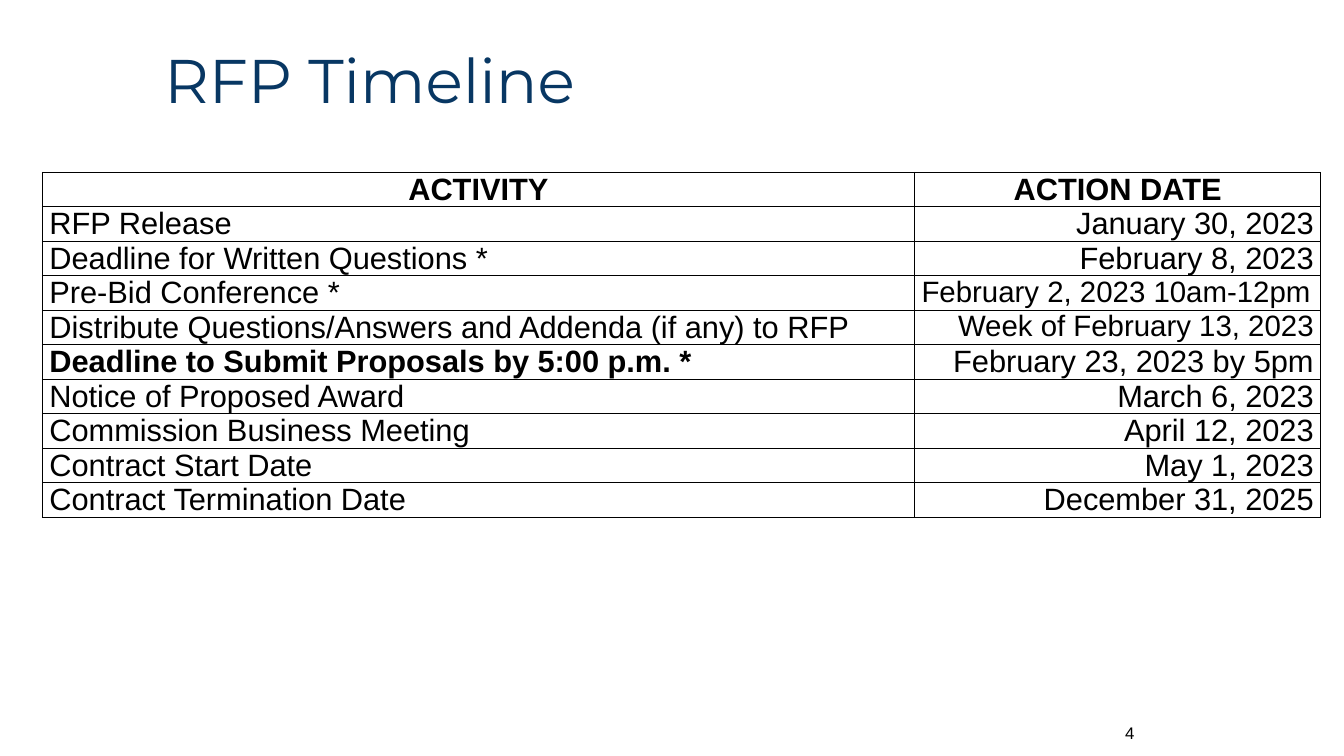
from lxml import etree
from pptx import Presentation
from pptx.dml.color import RGBColor
from pptx.enum.text import MSO_ANCHOR as ANCHOR, MSO_AUTO_SIZE as AUTOSIZE, PP_ALIGN as ALIGN
from pptx.oxml.ns import qn
from pptx.util import Inches, Pt

COLORS = {"navy": "083763", "black": "000000", "white": "FFFFFF"}


def style(paragraph, font_name, size, color, bold=False, align=ALIGN.LEFT):
    paragraph.alignment = align
    font = paragraph.runs[0].font
    formats = {"name": font_name, "size": Pt(size), "bold": bold}
    for attribute, value in formats.items():
        setattr(font, attribute, value)
    font.color.rgb = RGBColor.from_string(COLORS[color])


def add_borders(cell):
    properties = cell._tc.get_or_add_tcPr()
    for side in ("lnL", "lnR", "lnT", "lnB"):
        line = etree.SubElement(properties, qn(f"a:{side}"), w=str(Pt(1)))
        fill = etree.SubElement(line, qn("a:solidFill"))
        etree.SubElement(fill, qn("a:srgbClr"), val=COLORS["black"])


prs = Presentation()
prs.slide_width, prs.slide_height = Inches(13.33), Inches(7.5)
slide = prs.slides.add_slide(prs.slide_layouts[5])

title = slide.shapes.title
title.left, title.top = Inches(1.53), Inches(0.26)
title.width, title.height = Inches(10.89), Inches(1.14)
title.text_frame.text = "RFP Timeline"
title.text_frame.auto_size = AUTOSIZE.NONE
title.text_frame.vertical_anchor = ANCHOR.MIDDLE
title.text_frame.paragraphs[0].line_spacing = 0.9
style(title.text_frame.paragraphs[0], "Montserrat", 44, "navy")

# Activity, date, date size, date alignment
milestones = [
    ("ACTIVITY", "ACTION DATE", 22, ALIGN.CENTER),
    ("RFP Release", "January 30, 2023", 22, ALIGN.RIGHT),
    ("Deadline for Written Questions *", "February 8, 2023", 22, ALIGN.RIGHT),
    ("Pre-Bid Conference *", "February 2, 2023 10am-12pm", 21, ALIGN.LEFT),
    ("Distribute Questions/Answers and Addenda (if any) to RFP",
     "Week of February 13, 2023", 21, ALIGN.RIGHT),
    ("Deadline to Submit Proposals by 5:00 p.m. *", "February 23, 2023 by 5pm", 22, ALIGN.RIGHT),
    ("Notice of Proposed Award", "March 6, 2023", 22, ALIGN.RIGHT),
    ("Commission Business Meeting", "April 12, 2023", 22, ALIGN.RIGHT),
    ("Contract Start Date", "May 1, 2023", 22, ALIGN.RIGHT),
    ("Contract Termination Date", "December 31, 2025", 22, ALIGN.RIGHT),
]
timeline = slide.shapes.add_table(
    len(milestones), 2, Inches(0.42), Inches(1.71), Inches(12.68), Inches(3.4)).table
timeline.horz_banding = False
timeline.columns[0].width = Inches(8.65)
timeline.columns[1].width = Inches(4.03)

for row, (activity, date, date_size, date_align) in enumerate(milestones):
    header = row == 0
    deadline = activity.startswith("Deadline to Submit")
    entries = [
        (activity, 22, header or deadline, ALIGN.CENTER if header else ALIGN.LEFT, 6),
        (date, date_size, header, date_align, 6 if header else 3),
    ]
    for column, (text, size, bold, align, space_after) in enumerate(entries):
        cell = timeline.cell(row, column)
        cell.margin_left = cell.margin_right = Inches(0.07)
        cell.margin_top = cell.margin_bottom = 0
        cell.text = text
        paragraph = cell.text_frame.paragraphs[0]
        paragraph.space_after = Pt(space_after)
        style(paragraph, "Arial", size, "black", bold, align)
        add_borders(cell)
        cell.fill.solid()
        cell.fill.fore_color.rgb = RGBColor.from_string(COLORS["white"])

page_number = slide.shapes.add_textbox(
    Inches(9.42), Inches(7.07), Inches(1.93), Inches(0.4)).text_frame
page_number.word_wrap = True
page_number.vertical_anchor = ANCHOR.MIDDLE
page_number.text = "4"
style(page_number.paragraphs[0], "Arial", 12, "black", align=ALIGN.RIGHT)

prs.save("out.pptx")
